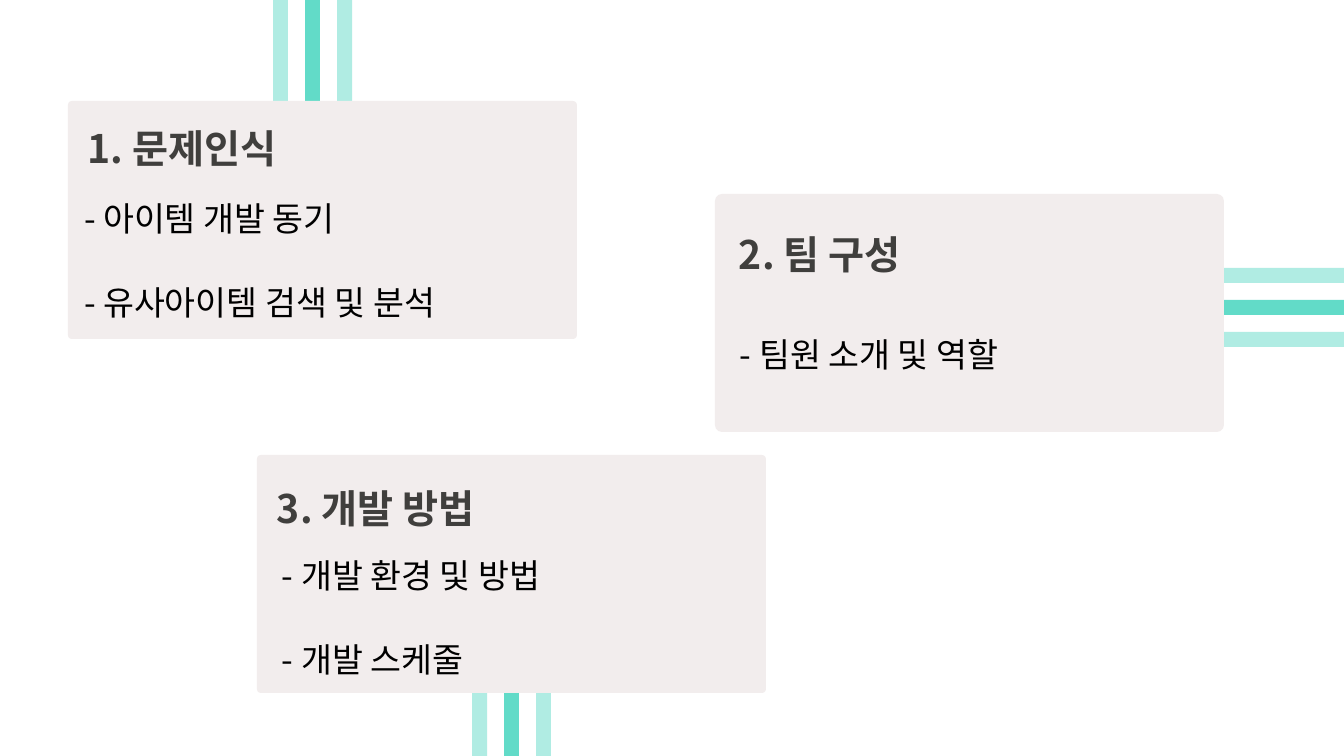
"""Build the agenda slide with three topic cards and mint stripes."""
import pptx
import pptx.util
import pptx.dml.color
import pptx.enum.shapes
import pptx.enum.text
import pptx.oxml
import pptx.oxml.ns

PX = 914400 / 100.8
THEME = {
    "font": "Noto Sans CJK KR",
    "mint": "62DBC8",
    "card": "F2EDED",
    "heading": {"size": 28, "color": "403F3D", "bold": True},
    "body": {"size": 24, "color": "000000", "bold": False},
    "leading": 59.7,
}
SLIDE_WIDTH, SLIDE_HEIGHT = 1344, 756
CARD_WIDTH, CARD_HEIGHT = 509, 238
STRIPE_WIDTH, STRIPE_LENGTH, PITCH = 15, 407, 32
CARDS = [
    {"at": (68, 101), "radius": 4, "stripes": (273, -209, 180),
     "heading": ("1. 문제인식", 88, 88),
     "body": (["- 아이템 개발 동기", "- 유사아이템 검색 및 분석"], 84, 155, 242)},
    {"at": (715, 194), "radius": 7, "stripes": (1200, 72, 90),
     "heading": ("2. 팀 구성", 739, 194),
     "body": (["- 팀원 소개 및 역할"], 740, 291, 73)},
    {"at": (257, 455), "radius": 4, "stripes": (472, 693, 180),
     "heading": ("3. 개발 방법", 277, 448),
     "body": (["- 개발 환경 및 방법", "- 개발 스케줄"], 282, 512, 157)},
]


def add_block(page, kind, bounds, color):
    """Add a plain filled shape with bounds in px."""
    block = page.shapes.add_shape(kind, *[round(value * PX) for value in bounds])
    block.shadow.inherit = False
    block.fill.solid()
    block.fill.fore_color.rgb = pptx.dml.color.RGBColor.from_string(color)
    block.line.fill.background()
    return block


def add_text(page, lines, bounds, style):
    """Add a text box without insets, one paragraph a line."""
    box = page.shapes.add_textbox(*[round(value * PX) for value in bounds])
    frame = box.text_frame
    frame.word_wrap = True
    frame.auto_size = pptx.enum.text.MSO_AUTO_SIZE.SHAPE_TO_FIT_TEXT
    frame.margin_left = frame.margin_right = frame.margin_top = frame.margin_bottom = 0
    for index, line in enumerate(lines):
        para = frame.add_paragraph() if index else frame.paragraphs[0]
        para.line_spacing = pptx.util.Pt(THEME["leading"])
        span = para.add_run()
        span.text = line
        span.font.size = pptx.util.Pt(style["size"])
        span.font.bold = style["bold"]
        span.font.color.rgb = pptx.dml.color.RGBColor.from_string(style["color"])
        span.font.name = THEME["font"]


deck = pptx.Presentation()
deck.slide_width = round(SLIDE_WIDTH * PX)
deck.slide_height = round(SLIDE_HEIGHT * PX)
page = deck.slides.add_slide(deck.slide_layouts[6])
shapes = pptx.enum.shapes.MSO_SHAPE

for card in CARDS:
    left, top, rotation = card["stripes"]
    step_x, step_y = (0, PITCH) if rotation == 90 else (PITCH, 0)
    for index in range(3):
        bounds = (left + index * step_x, top + index * step_y, STRIPE_WIDTH, STRIPE_LENGTH)
        stripe = add_block(page, shapes.RECTANGLE, bounds, THEME["mint"])
        stripe.rotation = rotation
        if index != 1:
            color = stripe.fill._xPr.find(".//" + pptx.oxml.ns.qn("a:srgbClr"))
            color.append(pptx.oxml.parse_xml(
                f'<a:alpha {pptx.oxml.ns.nsdecls("a")} val="50000"/>'))

    panel = add_block(page, shapes.ROUNDED_RECTANGLE,
                      (*card["at"], CARD_WIDTH, CARD_HEIGHT), THEME["card"])
    panel.adjustments[0] = card["radius"] / CARD_HEIGHT

    heading, left, top = card["heading"]
    add_text(page, [heading], (left, top, 342, 75), THEME["heading"])
    lines, left, top, height = card["body"]
    add_text(page, lines, (left, top, 525, height), THEME["body"])

deck.save("out.pptx")
